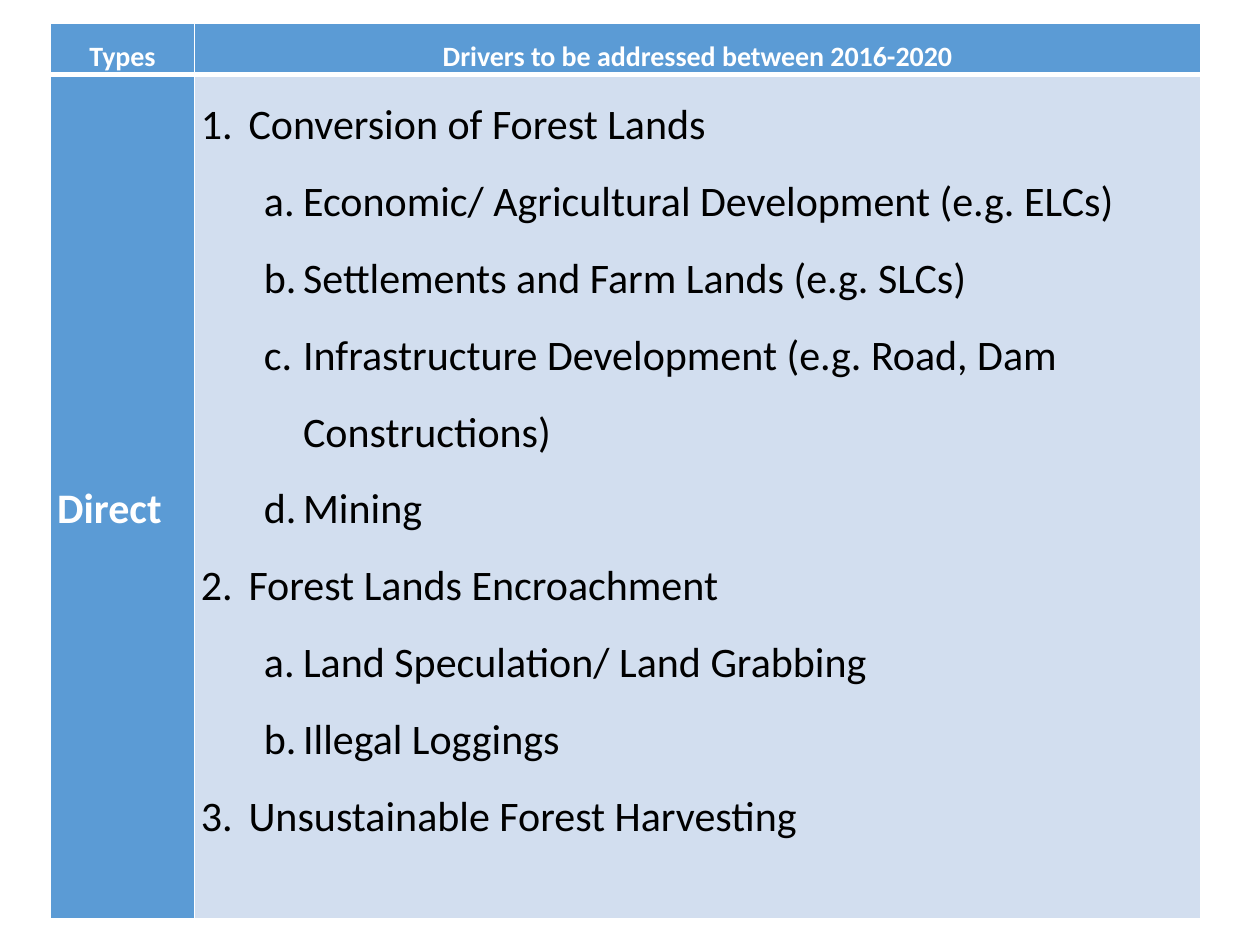
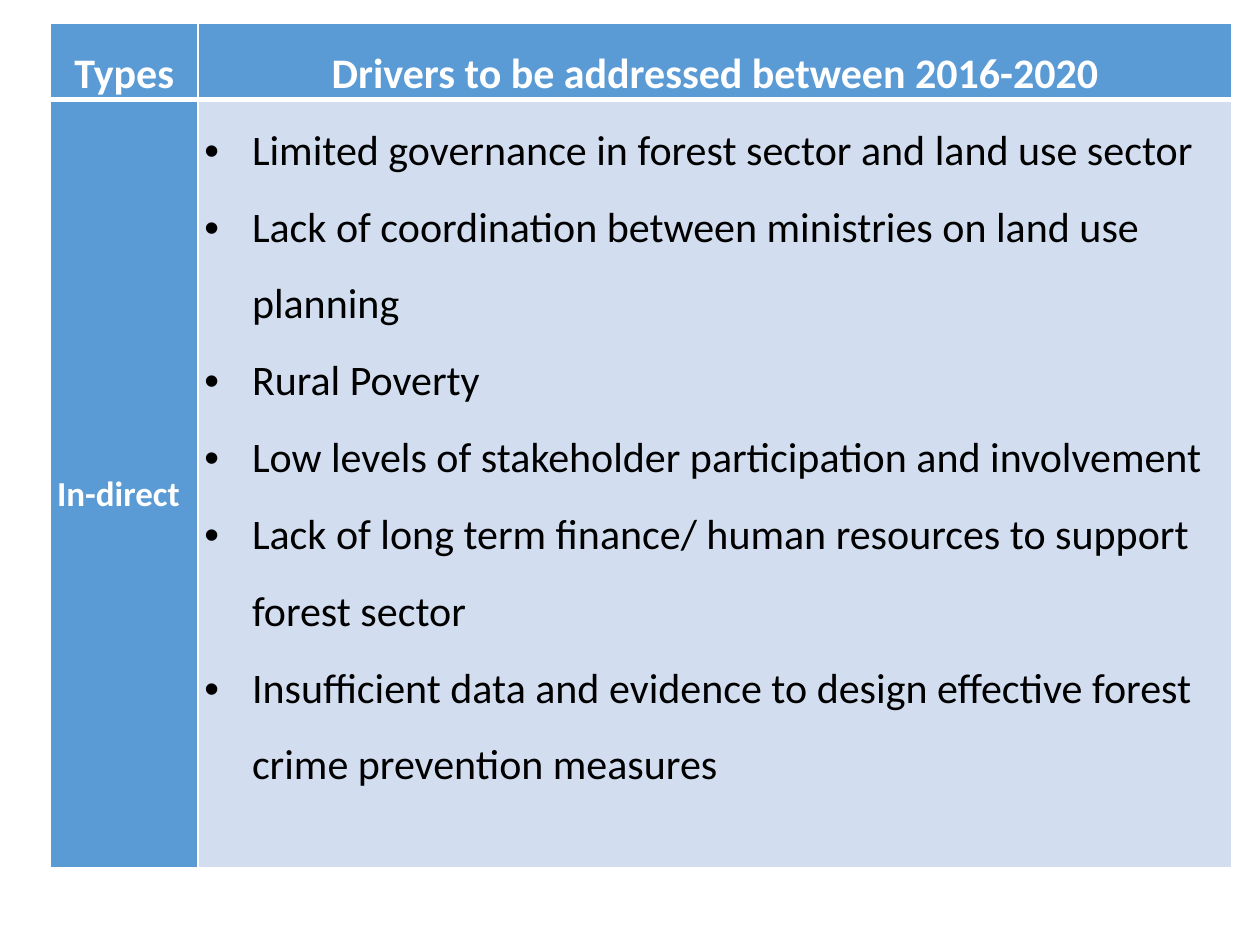
from lxml import etree
from pptx import Presentation
from pptx.dml.color import RGBColor
from pptx.enum.text import MSO_ANCHOR, PP_ALIGN
from pptx.oxml.ns import qn
from pptx.util import Cm, Pt

LEFT, CENTER, JUSTIFY = PP_ALIGN.LEFT, PP_ALIGN.CENTER, PP_ALIGN.JUSTIFY
TOP, MIDDLE = MSO_ANCHOR.TOP, MSO_ANCHOR.MIDDLE

# Shared look
FONT = "Calibri"
WHITE, BLACK, BLUE, PALE = "FFFFFF", "000000", "5B9BD5", "D2DEEF"
HEADINGS = ["Types", "Drivers to be addressed between 2016-2020"]
BODY_SIZE = 24
MARGIN = Cm(0.13)

# List levels: left margin and hanging width
INDENTS = [(Cm(0.96), Cm(0.96)), (Cm(2.06), Cm(0.79))]
NUMBERED = [("buAutoNum", "type", "arabicPeriod"),
            ("buAutoNum", "type", "alphaLcPeriod")]
BULLETED = [("buChar", "char", "•")]

# Content: each driver is a list level and its text
pages = [
    {"type": "Direct", "type_size": 24, "heading_size": 16,
     "columns": [2.9, 20.29], "rows": [1.03, 17.02], "markers": NUMBERED,
     "drivers": [
         (0, "Conversion of Forest Lands"),
         (1, "Economic/ Agricultural Development (e.g. ELCs)"),
         (1, "Settlements and Farm Lands (e.g. SLCs)"),
         (1, "Infrastructure Development (e.g. Road, Dam Constructions)"),
         (1, "Mining"),
         (0, "Forest Lands Encroachment"),
         (1, "Land Speculation/ Land Grabbing"),
         (1, "Illegal Loggings"),
         (0, "Unsustainable Forest Harvesting")]},
    {"type": "In-direct", "type_size": 20, "heading_size": 24,
     "columns": [2.97, 20.85], "rows": [1.54, 15.48], "markers": BULLETED,
     "drivers": [
         (0, "Limited governance in forest sector and land use sector"),
         (0, "Lack of coordination between ministries on land use planning"),
         (0, "Rural Poverty"),
         (0, "Low levels of stakeholder participation and involvement"),
         (0, "Lack of long term finance/ human resources to support forest sector"),
         (0, "Insufficient data and evidence to design effective forest crime "
             "prevention measures")]},
]


def color(value):
    return RGBColor.from_string(value)


def style_cell(cell, fill, size, text_color, bold, align, anchor, thick_side):
    """Format a filled cell: margins, white borders, fill and text."""
    cell.margin_left = cell.margin_right = MARGIN
    cell.margin_top = cell.margin_bottom = 0
    cell.vertical_anchor = anchor
    properties = cell._tc.get_or_add_tcPr()
    for side in ("lnL", "lnR", "lnT", "lnB"):
        width = Pt(3 if side == thick_side else 1)
        line = etree.SubElement(properties, qn("a:" + side), w=str(width))
        solid = etree.SubElement(line, qn("a:solidFill"))
        etree.SubElement(solid, qn("a:srgbClr"), val=WHITE)
    cell.fill.solid()
    cell.fill.fore_color.rgb = color(fill)
    for para in cell.text_frame.paragraphs:
        para.alignment = align
        para.line_spacing = 1.5
        for span in para.runs:
            span.font.name = FONT
            span.font.size = Pt(size)
            span.font.bold = bold
            span.font.color.rgb = color(text_color)


deck = Presentation()
deck.slide_width, deck.slide_height = Cm(25.4), Cm(19.05)
blank_layout = deck.slide_layouts[6]

for content in pages:
    page = deck.slides.add_slide(blank_layout)

    # Table grid
    table = page.shapes.add_table(
        2, 2, Cm(1.02), Cm(0.46),
        Cm(sum(content["columns"])), Cm(sum(content["rows"]))).table
    for column, width in zip(table.columns, content["columns"]):
        column.width = Cm(width)
    for row, height in zip(table.rows, content["rows"]):
        row.height = Cm(height)

    # Header row
    for index, heading in enumerate(HEADINGS):
        cell = table.cell(0, index)
        cell.text_frame.text = heading
        style_cell(cell, BLUE, content["heading_size"], WHITE, True, CENTER, TOP, "lnB")

    # Type of driver
    type_cell = table.cell(1, 0)
    type_cell.text_frame.text = content["type"]
    style_cell(type_cell, BLUE, content["type_size"], WHITE, True, JUSTIFY, MIDDLE, "lnT")

    # List of drivers
    list_cell = table.cell(1, 1)
    frame = list_cell.text_frame
    frame.text = "\n".join(text for level, text in content["drivers"])
    style_cell(list_cell, PALE, BODY_SIZE, BLACK, False, LEFT, TOP, "lnT")
    for para, (level, text) in zip(frame.paragraphs, content["drivers"]):
        para.level = level
        margin, hanging = INDENTS[level]
        tag, attribute, marker = content["markers"][level]
        properties = para._p.get_or_add_pPr()
        properties.set("marL", str(margin))
        properties.set("indent", str(-hanging))
        etree.SubElement(properties, qn("a:buFont"),
                         typeface="Arial" if tag == "buChar" else FONT)
        etree.SubElement(properties, qn("a:" + tag)).set(attribute, marker)

deck.save("out.pptx")
